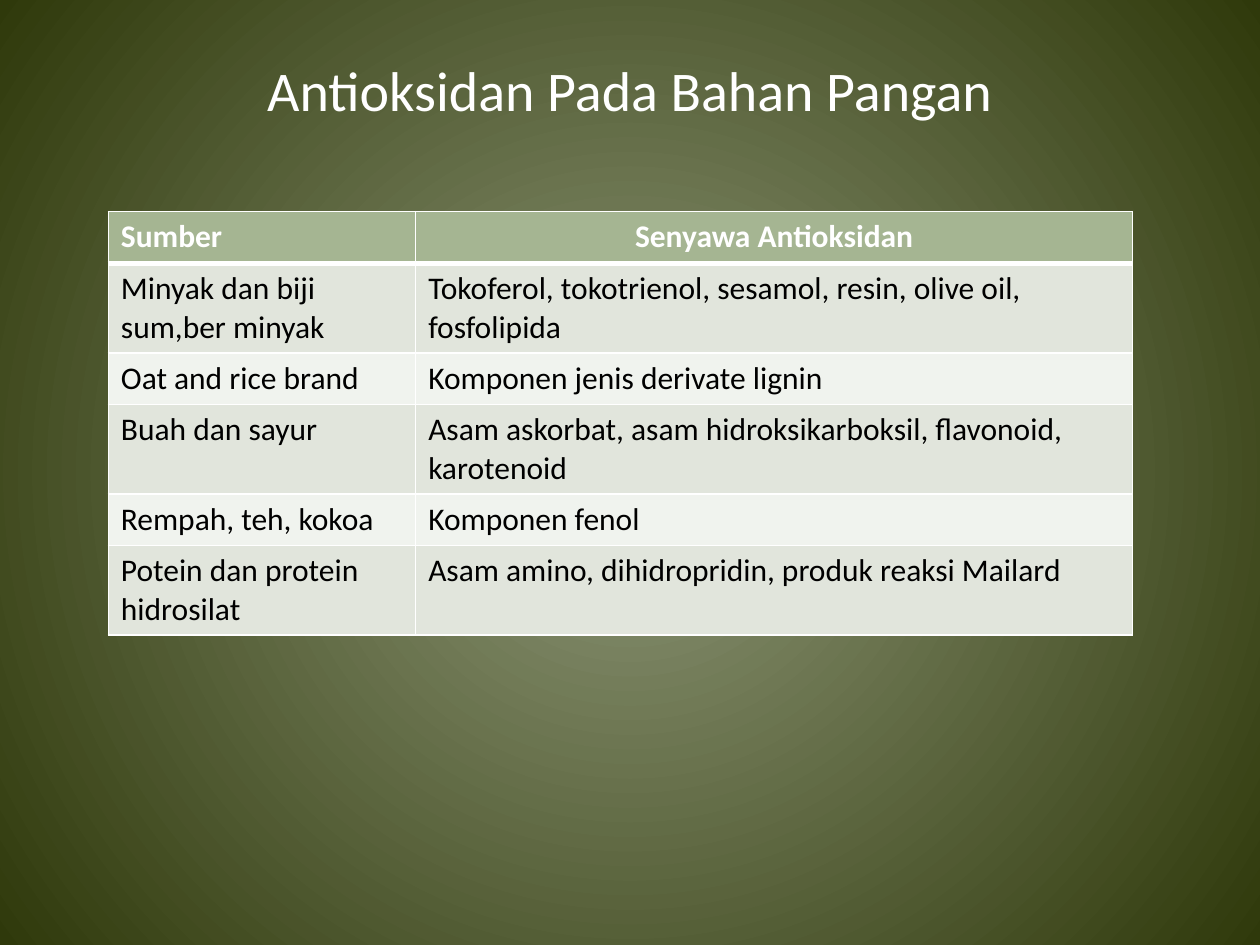
from dataclasses import dataclass

from lxml import etree
from pptx import Presentation
from pptx.dml.color import RGBColor
from pptx.enum.text import MSO_ANCHOR, MSO_AUTO_SIZE, PP_ALIGN
from pptx.oxml.ns import qn
from pptx.util import Inches, Pt

LEFT, CENTER = PP_ALIGN.LEFT, PP_ALIGN.CENTER
TOP = MSO_ANCHOR.TOP
FIXED = MSO_AUTO_SIZE.NONE
FONT = "Calibri"
WHITE, BLACK = "FFFFFF", "000000"
GLOW, EDGE = "8D9677", "2F390B"
HEAD, BANDS = "A5B592", ("F0F3EE", "E1E5DC")
WIDE, HIGH = Inches(10), Inches(7.5)
SHARES = (0.3, 0.7)
THIN, THICK = 1, 3


@dataclass(frozen=True)
class Source:
    food: str
    matter: str


ROWS = (
    Source("Sumber", "Senyawa Antioksidan"),
    Source("Minyak dan biji sum,ber minyak",
           "Tokoferol, tokotrienol, sesamol, resin, olive oil, fosfolipida"),
    Source("Oat and rice brand", "Komponen jenis derivate lignin"),
    Source("Buah dan sayur",
           "Asam askorbat, asam hidroksikarboksil, flavonoid, karotenoid"),
    Source("Rempah, teh, kokoa", "Komponen fenol"),
    Source("Potein dan protein hidrosilat",
           "Asam amino, dihidropridin, produk reaksi Mailard"),
)


def color(code: str) -> RGBColor:
    return RGBColor.from_string(code)


def write(frame, text: str, size: int, code: str, align, bold: bool = False) -> None:
    frame.text = text
    line = frame.paragraphs[0]
    line.alignment = align
    font = line.font
    font.name, font.size, font.bold = FONT, Pt(size), bold
    font.color.rgb = color(code)


def paint(slide) -> None:
    fill = slide.background.fill
    fill.gradient()
    for stop, code in zip(fill.gradient_stops, (GLOW, EDGE)):
        stop.color.rgb = color(code)
    line = next(slide.element.iter(qn("a:lin")))
    ring = etree.Element(qn("a:path"), path="circle")
    etree.SubElement(ring, qn("a:fillToRect"), l="50000", t="50000", r="50000", b="50000")
    line.getparent().replace(line, ring)


def border(cell, top: int, bottom: int) -> None:
    props = cell._tc.get_or_add_tcPr()
    sides = (("L", THIN), ("R", THIN), ("T", top), ("B", bottom))
    for spot, (side, width) in enumerate(sides):
        line = etree.Element(qn(f"a:ln{side}"), w=str(Pt(width)))
        fill = etree.SubElement(line, qn("a:solidFill"))
        etree.SubElement(fill, qn("a:srgbClr"), val=WHITE)
        props.insert(spot, line)


def style(cell, text: str, row: int, col: int) -> None:
    head = row == 0
    write(cell.text_frame, text, 18, WHITE if head else BLACK,
          CENTER if head and col else LEFT, head)
    cell.fill.solid()
    cell.fill.fore_color.rgb = color(HEAD if head else BANDS[row % 2])
    border(cell, THICK if row == 1 else THIN, THICK if head else THIN)


def add_title(slide, text: str) -> None:
    title = slide.shapes.title
    title.left, title.top = Inches(0.5), Inches(0.39)
    title.width, title.height = Inches(9), Inches(6.31)
    frame = title.text_frame
    frame.vertical_anchor, frame.auto_size = TOP, FIXED
    write(frame, text, 32, WHITE, CENTER)


def add_grid(slide) -> None:
    width, step = Inches(8.13), Inches(0.41)
    table = slide.shapes.add_table(
        len(ROWS), len(SHARES), Inches(0.86), Inches(1.68), width, step * len(ROWS)
    ).table
    for column, share in zip(table.columns, SHARES):
        column.width = int(width * share)
    for row, item in enumerate(ROWS):
        for col, text in enumerate((item.food, item.matter)):
            style(table.cell(row, col), text, row, col)


def main() -> None:
    deck = Presentation()
    deck.slide_width, deck.slide_height = WIDE, HIGH
    slide = deck.slides.add_slide(deck.slide_layouts[5])
    paint(slide)
    add_title(slide, "Antioksidan Pada Bahan Pangan")
    add_grid(slide)
    deck.save("out.pptx")


if __name__ == "__main__":
    main()
